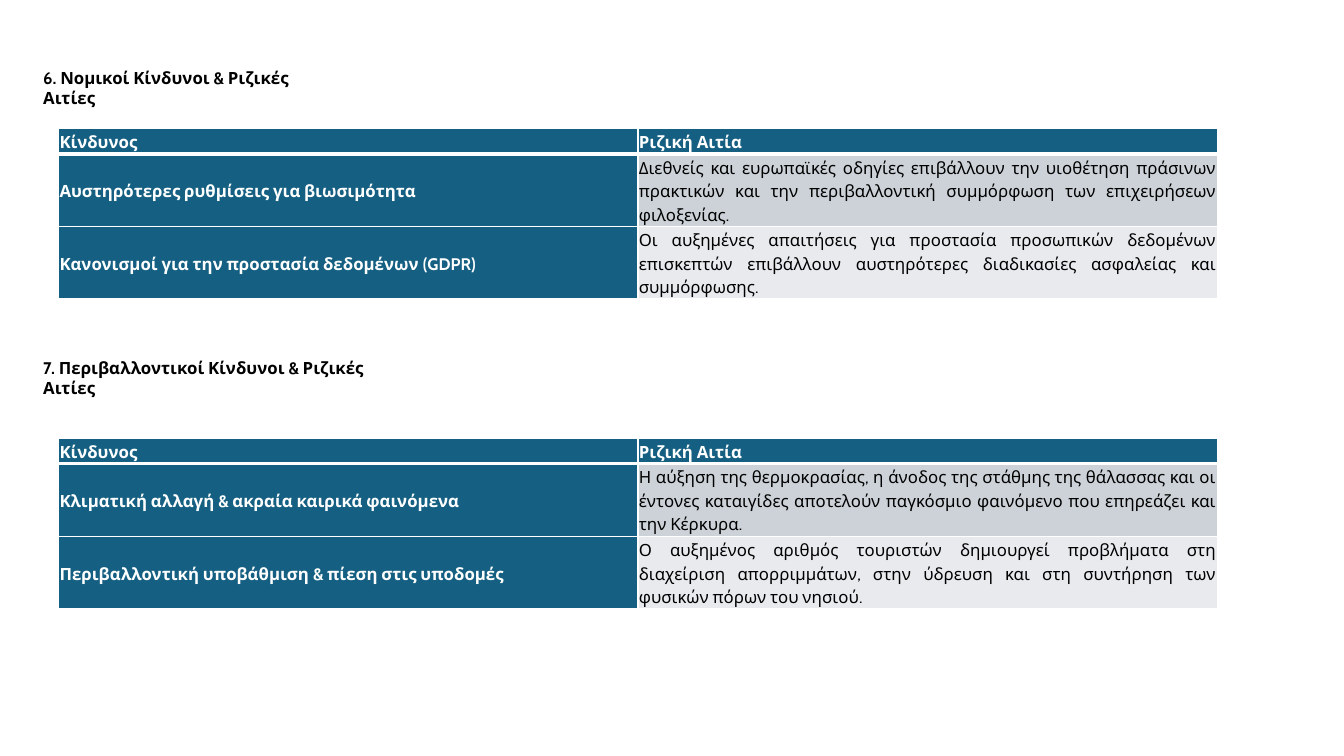
from lxml.etree import SubElement as Sub
from pptx import Presentation
from pptx.dml.color import RGBColor as Rgb
from pptx.enum.text import MSO_ANCHOR as Anchor, PP_ALIGN as Align
from pptx.oxml.ns import qn
from pptx.util import Cm, Pt

HUES = {"head": "156082", "odd": "CCD2D8", "even": "E8EAED",
        "white": "FFFFFF", "black": "000000"}
LEFT, COL = 1.48, 14.6
ROWS = (0.63, 1.83, 1.83)
HEADER = ("Κίνδυνος", "Ριζική Αιτία")

PARTS = [
    {"title": "6. Νομικοί Κίνδυνοι & Ριζικές Αιτίες",
     "box": (1.83, 7.29), "top": 3.24,
     "risks": [
         ("Αυστηρότερες ρυθμίσεις για βιωσιμότητα",
          "Διεθνείς και ευρωπαϊκές οδηγίες επιβάλλουν την υιοθέτηση πράσινων "
          "πρακτικών και την περιβαλλοντική συμμόρφωση των επιχειρήσεων "
          "φιλοξενίας."),
         ("Κανονισμοί για την προστασία δεδομένων (GDPR)",
          "Οι αυξημένες απαιτήσεις για προστασία προσωπικών δεδομένων "
          "επισκεπτών επιβάλλουν αυστηρότερες διαδικασίες ασφαλείας και "
          "συμμόρφωσης.")]},
    {"title": "7. Περιβαλλοντικοί Κίνδυνοι & Ριζικές Αιτίες",
     "box": (9.14, 8.94), "top": 11.05,
     "risks": [
         ("Κλιματική αλλαγή & ακραία καιρικά φαινόμενα",
          "Η αύξηση της θερμοκρασίας, η άνοδος της στάθμης της θάλασσας και "
          "οι έντονες καταιγίδες αποτελούν παγκόσμιο φαινόμενο που επηρεάζει "
          "και την Κέρκυρα."),
         ("Περιβαλλοντική υποβάθμιση & πίεση στις υποδομές",
          "Ο αυξημένος αριθμός τουριστών δημιουργεί προβλήματα στη διαχείριση "
          "απορριμμάτων, στην ύδρευση και στη συντήρηση των φυσικών πόρων του "
          "νησιού.")]},
]


def style(para, hue, bold):
    """Format every run of a paragraph."""
    for run in para.runs:
        font = run.font
        font.name, font.size, font.bold = "Cabin", Pt(12), bold
        font.color.rgb = Rgb.from_string(HUES[hue])


def add_title(slide, text, top, width):
    """Add a section heading."""
    box = slide.shapes.add_textbox(Cm(0.84), Cm(top), Cm(width), Cm(0.76))
    frame = box.text_frame
    frame.word_wrap = True
    frame.vertical_anchor = Anchor.MIDDLE
    frame.text = text
    style(frame.paragraphs[0], "black", True)


def edge(cell, row):
    """Draw white borders, thick under the header row."""
    props = cell._tc.get_or_add_tcPr()
    widths = {"L": 1, "R": 1, "T": 3 if row == 1 else 1, "B": 3 if row == 0 else 1}
    for side, width in widths.items():
        line = Sub(props, qn(f"a:ln{side}"), w=str(Pt(width)))
        Sub(Sub(line, qn("a:solidFill")), qn("a:srgbClr"), val=HUES["white"])


def fill_cell(cell, text, row, dark):
    """Write and format one table cell."""
    cell.text_frame.text = text
    cell.vertical_anchor = Anchor.MIDDLE
    cell.margin_left = cell.margin_right = Cm(0.02)
    cell.margin_top = cell.margin_bottom = Cm(0.02)
    para = cell.text_frame.paragraphs[0]
    para.alignment = Align.JUSTIFY
    para.line_spacing, para.space_after = 1.15, Pt(8)
    style(para, "white" if dark else "black", dark)
    edge(cell, row)
    hue = "head" if dark else "odd" if row % 2 else "even"
    cell.fill.solid()
    cell.fill.fore_color.rgb = Rgb.from_string(HUES[hue])


def add_risks(slide, risks, top):
    """Add a table of risks and root causes."""
    lines = [HEADER, *risks]
    frame = slide.shapes.add_table(len(lines), 2, Cm(LEFT), Cm(top),
                                   Cm(2 * COL), Cm(sum(ROWS)))
    table = frame.table
    table.horz_banding = False
    for col in table.columns:
        col.width = Cm(COL)
    for row, line in enumerate(lines):
        table.rows[row].height = Cm(ROWS[row])
        for col, text in enumerate(line):
            fill_cell(table.cell(row, col), text, row, row == 0 or col == 0)


def main():
    """Build the slide and save it."""
    deck = Presentation()
    deck.slide_width, deck.slide_height = Cm(33.87), Cm(19.05)
    slide = deck.slides.add_slide(deck.slide_layouts[6])
    for part in PARTS:
        add_risks(slide, part["risks"], part["top"])
        add_title(slide, part["title"], *part["box"])
    deck.save("out.pptx")


if __name__ == "__main__":
    main()
